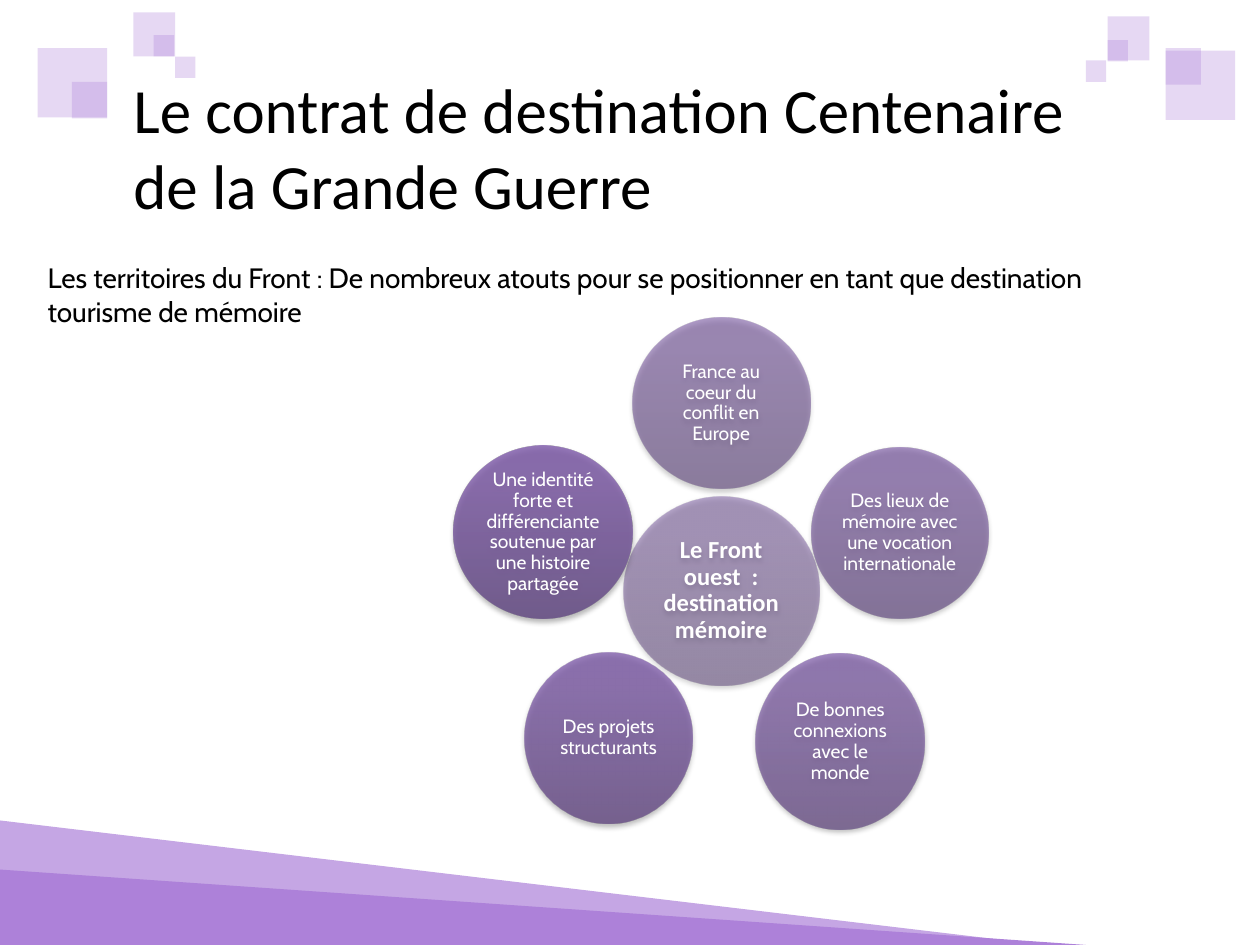
from dataclasses import dataclass

from lxml import etree
from pptx import Presentation
from pptx import util as u
from pptx.dml.color import RGBColor
from pptx.enum import shapes, text
from pptx.oxml import ns

LILAC = "AD81D9"
WHITE = "FFFFFF"
BLACK = "000000"


@dataclass
class Tile:
    left: float
    top: float
    width: float
    height: float
    alpha: int = 30


@dataclass
class Bubble:
    label: str
    center_x: float
    center_y: float
    width: float
    height: float
    alpha: int
    shades: tuple[str, str, str]
    size: int = 11
    font: str = "Cabin"
    bold: bool = False


HILLS = [Tile(0, 16.54, 21.31, 2.54, 70), Tile(0, 17.53, 21.89, 1.52, 100)]

TILES = [
    Tile(0.76, 0.97, 1.4, 1.4),
    Tile(1.45, 1.65, 0.71, 0.74),
    Tile(2.69, 0.25, 0.84, 0.89),
    Tile(22.33, 0.33, 0.84, 0.89),
    Tile(3.1, 0.71, 0.41, 0.43),
    Tile(23.5, 1.02, 1.4, 1.4),
    Tile(21.89, 1.22, 0.41, 0.43),
    Tile(3.53, 1.14, 0.41, 0.43),
    Tile(22.33, 0.81, 0.41, 0.43),
    Tile(23.5, 0.97, 0.71, 0.74),
]

BUBBLES = [
    Bubble("Le Front ouest  : destination mémoire", 14.54, 11.91, 3.94, 3.81,
           50, ("563D74", "705097", "704F99"), 14, "Calibri", True),
    Bubble("France au coeur du conflit en Europe", 14.54, 8.13, 3.58, 3.45,
           56, ("583E77", "72519A", "73509C")),
    Bubble("Des lieux de mémoire avec une vocation internationale",
           18.14, 10.74, 3.56, 3.45, 62, ("5A407A", "75539E", "7551A0")),
    Bubble("De bonnes connexions avec le monde", 16.94, 14.95, 3.4, 3.53,
           68, ("5C417C", "7754A1", "7753A4")),
    Bubble("Des projets structurants", 12.27, 14.88, 3.38, 3.45,
           74, ("5E427E", "7956A4", "7A55A6")),
    Bubble("Une identité forte et différenciante soutenue par une histoire partagée",
           10.95, 10.73, 3.61, 3.48, 80, ("5F4580", "7C59A6", "7C58A8")),
]


def color(code: str) -> RGBColor:
    return RGBColor.from_string(code)


def add_node(parent, tag: str, **attributes):
    node = etree.SubElement(parent, ns.qn(tag))
    for name, value in attributes.items():
        node.set(name, str(value))
    return node


def add_tint(parent, code: str, alpha: int) -> None:
    tint = add_node(parent, "a:srgbClr", val=code)
    add_node(tint, "a:alpha", val=alpha * 1000)


def add_run(paragraph, words: str, size: int, font: str, code: str, bold=False) -> None:
    run = paragraph.add_run()
    run.text = words
    run.font.size = u.Pt(size)
    run.font.name = font
    run.font.bold = bold
    run.font.color.rgb = color(code)


def draw_tile(slide, tile: Tile, preset):
    ornament = slide.shapes.add_shape(
        preset, u.Cm(tile.left), u.Cm(tile.top), u.Cm(tile.width), u.Cm(tile.height))
    ornament.shadow.inherit = False
    ornament.line.fill.background()
    ornament.fill.solid()
    ornament.fill.fore_color.rgb = color(LILAC)
    if tile.alpha < 100:
        tint = ornament.fill._xPr.find(".//" + ns.qn("a:srgbClr"))
        add_node(tint, "a:alpha", val=tile.alpha * 1000)
    return ornament


def draw_bubble(slide, bubble: Bubble) -> None:
    disc = slide.shapes.add_shape(
        shapes.MSO_SHAPE.OVAL,
        u.Cm(bubble.center_x - bubble.width / 2),
        u.Cm(bubble.center_y - bubble.height / 2),
        u.Cm(bubble.width), u.Cm(bubble.height))
    disc.shadow.inherit = False
    disc.line.fill.background()
    disc.fill.gradient()
    gradient = disc.fill._xPr.find(ns.qn("a:gradFill"))
    stops = gradient.find(ns.qn("a:gsLst"))
    for stop in list(stops):
        stops.remove(stop)
    for position, shade in zip((0, 80, 100), bubble.shades):
        add_tint(add_node(stops, "a:gs", pos=position * 1000), shade, bubble.alpha)
    gradient.find(ns.qn("a:lin")).set("ang", str(270 * 60000))

    effects = disc.fill._xPr.find(ns.qn("a:effectLst"))
    shadow = add_node(effects, "a:outerShdw", blurRad=u.Pt(3.1), dist=u.Pt(1.8),
                      dir=90 * 60000, rotWithShape=0)
    add_tint(shadow, BLACK, 35)

    frame = disc.text_frame
    frame.word_wrap = True
    frame.vertical_anchor = text.MSO_ANCHOR.MIDDLE
    frame.margin_left = frame.margin_right = u.Cm(0.05)
    frame.margin_top = frame.margin_bottom = u.Cm(0.05)
    label = frame.paragraphs[0]
    label.alignment = text.PP_ALIGN.CENTER
    label.line_spacing = 0.9
    add_run(label, bubble.label, bubble.size, bubble.font, WHITE, bubble.bold)


def draw_text(slide, words: str, place: Tile, size: int, font: str, anchor) -> None:
    frame = slide.shapes.add_textbox(
        u.Cm(place.left), u.Cm(place.top), u.Cm(place.width), u.Cm(place.height)).text_frame
    frame.word_wrap = True
    frame.vertical_anchor = anchor
    add_run(frame.paragraphs[0], words, size, font, BLACK)


def main() -> None:
    deck = Presentation()
    deck.slide_width, deck.slide_height = u.Cm(25.4), u.Cm(19.05)
    slide = deck.slides.add_slide(deck.slide_layouts[6])

    for hill in HILLS:
        draw_tile(slide, hill, shapes.MSO_SHAPE.ISOSCELES_TRIANGLE).adjustments[0] = 0
    for tile in TILES:
        draw_tile(slide, tile, shapes.MSO_SHAPE.RECTANGLE)

    draw_text(slide, "Le contrat de destination Centenaire de la Grande Guerre",
              Tile(2.44, 2.03, 20.75, 1.83), 36, "Calibri", text.MSO_ANCHOR.MIDDLE)
    draw_text(slide, "Les territoires du Front : De nombreux atouts pour se positionner "
              "en tant que destination tourisme de mémoire",
              Tile(0.71, 5.13, 23.19, 2.13), 16, "Cabin", text.MSO_ANCHOR.TOP)

    for bubble in BUBBLES:
        draw_bubble(slide, bubble)

    deck.save("out.pptx")


if __name__ == "__main__":
    main()
